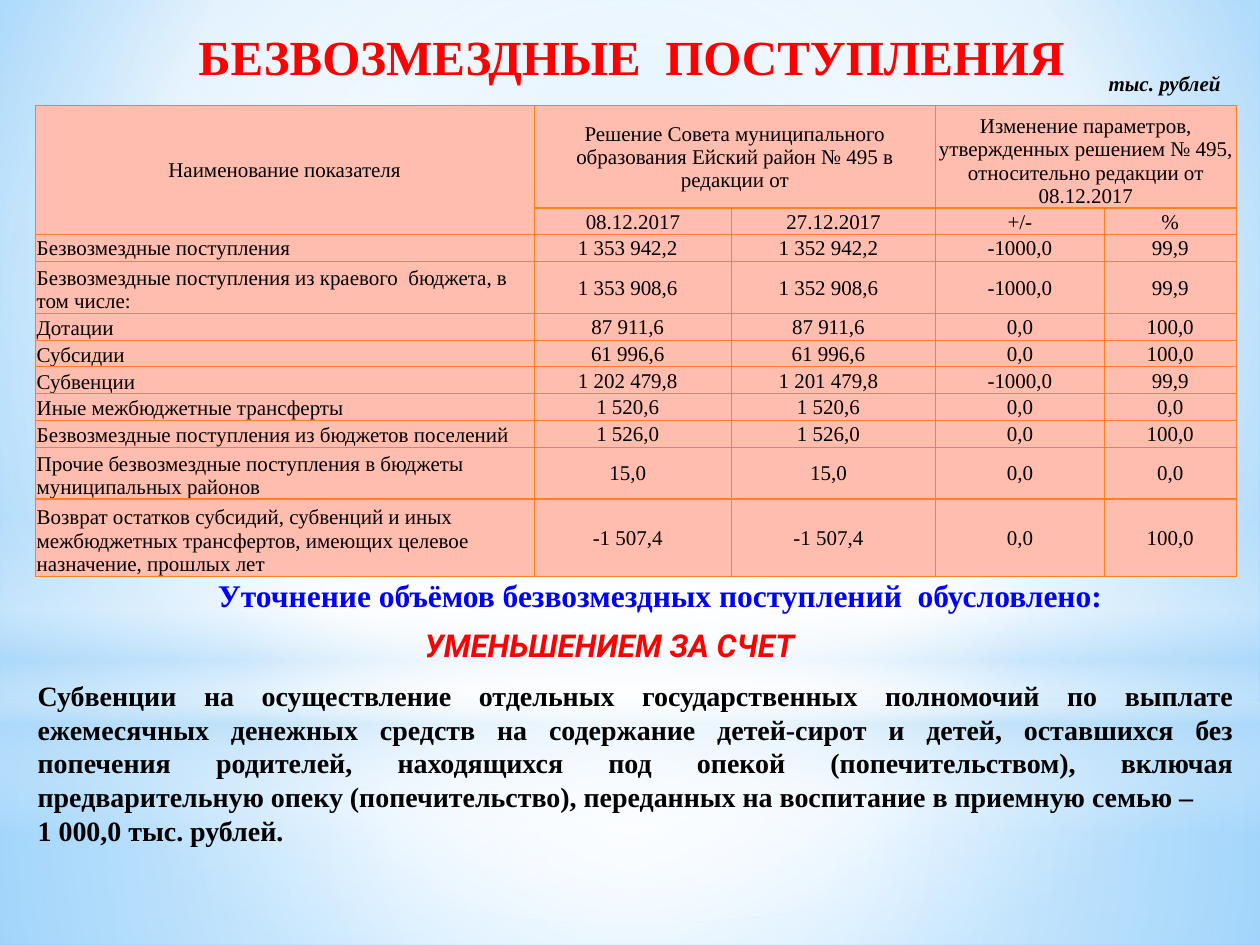
from lxml import etree
from pptx import Presentation
from pptx import util as u
from pptx.dml.color import RGBColor
from pptx.enum import shapes, text
from pptx.oxml import ns

RED = RGBColor(0xFF, 0x00, 0x00)
BLUE = RGBColor(0x00, 0x00, 0xFF)
BLACK = RGBColor(0x00, 0x00, 0x00)
WHITE = RGBColor(0xFF, 0xFF, 0xFF)
PINK = RGBColor(0xFF, 0xBD, 0xAF)
EDGE = RGBColor(0xFF, 0x80, 0x21)
PALE = RGBColor(0xB4, 0xDC, 0xFA)
SKY = RGBColor(0x9E, 0xD5, 0xFF)
DEEP = RGBColor(0x5B, 0xB9, 0xFF)

LEFT, MID, FULL = text.PP_ALIGN.LEFT, text.PP_ALIGN.CENTER, text.PP_ALIGN.JUSTIFY
CORE = (50, 50, 50, 50)


def node(up, tag, **keys):
    return etree.SubElement(up, ns.qn(tag), {k: str(v) for k, v in keys.items()})


class Page:
    serif = "Times New Roman"
    sans = "Roboto"

    def __init__(self, deck):
        self.slide = deck.slides.add_slide(deck.slide_layouts[6])

    def blend(self, part, stops, rect=None):
        old = next(part.iter(ns.qn("a:solidFill")))
        grad = etree.Element(ns.qn("a:gradFill"), rotWithShape="1")
        row = node(grad, "a:gsLst")
        for pos, tint, alpha in stops:
            stop = node(row, "a:gs", pos=pos * 1000)
            tone = node(stop, "a:srgbClr", val=tint)
            if alpha < 100:
                node(tone, "a:alpha", val=alpha * 1000)
        if rect:
            way = node(grad, "a:path", path="circle")
            node(way, "a:fillToRect", **{k: v * 1000 for k, v in zip("ltrb", rect)})
        else:
            node(grad, "a:lin", ang=5400000, scaled=0)
        old.getparent().replace(old, grad)

    def back(self, stops, rect):
        self.slide.background.fill.solid()
        self.blend(self.slide.element, stops, rect)

    def glow(self, kind, top, high, stops, rect=None):
        shape = self.slide.shapes.add_shape(kind, 0, u.Cm(top), u.Cm(25.4), u.Cm(high))
        shape.shadow.inherit = False
        shape.fill.solid()
        shape.line.fill.background()
        self.blend(shape.element, stops, rect)

    def style(self, para, size, tint, align=LEFT, bold=False, slant=False, face=None):
        para.alignment = align
        font = para.font
        font.name, font.size = face or self.serif, u.Pt(size)
        font.bold, font.italic = bold, slant
        font.color.rgb = tint

    def note(self, box, lines, size, tint, wrap=True, **look):
        frame = self.slide.shapes.add_textbox(*map(u.Cm, box)).text_frame
        frame.word_wrap = wrap
        frame.text = "\n".join(lines)
        for para in frame.paragraphs:
            self.style(para, size, tint, bold=True, **look)

    def grid(self, left, top, wides, highs):
        table = self.slide.shapes.add_table(
            len(highs), len(wides), u.Cm(left), u.Cm(top),
            u.Cm(sum(wides)), u.Cm(sum(highs))).table
        table.first_row = table.horz_banding = False
        for col, wide in zip(table.columns, wides):
            col.width = u.Cm(wide)
        for row, high in zip(table.rows, highs):
            row.height = u.Cm(high)
        return table

    def cell(self, cell, words, size, tint, fill=None, edge=None, low=False, pad=0.03, **look):
        cell.text = words
        cell.margin_left = cell.margin_top = u.Cm(0.03)
        cell.margin_right, cell.margin_bottom = u.Cm(pad), 0
        anchor = text.MSO_ANCHOR
        cell.vertical_anchor = anchor.BOTTOM if low else anchor.MIDDLE
        self.style(cell.text_frame.paragraphs[0], size, tint, **look)
        if fill:
            cell.fill.solid()
            cell.fill.fore_color.rgb = fill
        else:
            cell.fill.background()
        props = cell.fill._xPr
        for spot, side in enumerate("LRTB"):
            line = etree.Element(ns.qn("a:ln" + side), w=str(u.Pt(0.75)))
            if edge:
                node(node(line, "a:solidFill"), "a:srgbClr", val=edge)
            else:
                node(line, "a:noFill")
            props.insert(spot, line)


ROWS = [
    ("Наименование показателя",
     "Решение Совета муниципального образования Ейский район № 495 в редакции от", "",
     "Изменение параметров, утвержденных решением № 495, относительно редакции от 08.12.2017", ""),
    ("", "08.12.2017", "27.12.2017", "+/-", "%"),
    ("Безвозмездные поступления", "1 353 942,2", "1 352 942,2", "-1000,0", "99,9"),
    ("Безвозмездные поступления из краевого  бюджета, в том числе:",
     "1 353 908,6", "1 352 908,6", "-1000,0", "99,9"),
    ("Дотации", "87 911,6", "87 911,6", "0,0", "100,0"),
    ("Субсидии", "61 996,6", "61 996,6", "0,0", "100,0"),
    ("Субвенции", "1 202 479,8", "1 201 479,8", "-1000,0", "99,9"),
    ("Иные межбюджетные трансферты", "1 520,6", "1 520,6", "0,0", "0,0"),
    ("Безвозмездные поступления из бюджетов поселений", "1 526,0", "1 526,0", "0,0", "100,0"),
    ("Прочие безвозмездные поступления в бюджеты муниципальных районов",
     "15,0", "15,0", "0,0", "0,0"),
    ("Возврат остатков субсидий, субвенций и иных межбюджетных трансфертов, "
     "имеющих целевое назначение, прошлых лет", "-1 507,4", "-1 507,4", "0,0", "100,0"),
]
HIGHS = [2.06, 0.53, 0.53, 1.03] + [0.53] * 5 + [1.04, 1.55]
WIDES = [10.06, 3.98, 4.11, 3.4, 2.66]


def main():
    deck = Presentation()
    deck.slide_width, deck.slide_height = u.Cm(25.4), u.Cm(19.05)
    page = Page(deck)
    rect, oval = shapes.MSO_SHAPE.RECTANGLE, shapes.MSO_SHAPE.OVAL

    page.back([(0, SKY, 100), (60, WHITE, 100), (100, DEEP, 100)], (20, 10, 20, 60))
    page.glow(rect, 14.17, 4.88, [(0, WHITE, 91), (37, WHITE, 76), (100, PALE, 79)], CORE)
    page.glow(rect, 0, 14.17, [(0, WHITE, 89), (48, WHITE, 62), (100, PALE, 79)], CORE)
    page.glow(rect, 10.46, 6.35, [(0, WHITE, 0), (29, WHITE, 30), (45, PALE, 40),
                                  (55, WHITE, 26), (65, PALE, 60), (100, WHITE, 0)])
    page.glow(oval, 4.45, 14.17, [(0, WHITE, 100), (56, WHITE, 0)], CORE)

    title = page.grid(1.73, -0.66, [22], [2.39])
    page.cell(title.cell(0, 0), "БЕЗВОЗМЕЗДНЫЕ  ПОСТУПЛЕНИЯ", 28, RED,
              low=True, align=MID, bold=True)
    page.note((22.1, 1.3, 2.79, 0.76), ["тыс. рублей"], 12, BLACK, wrap=False, slant=True)
    page.note((0.89, 11.48, 24.84, 1.02),
              ["Уточнение объёмов безвозмездных поступлений  обусловлено:"], 18, BLUE, align=MID)

    table = page.grid(0.71, 2.13, WIDES, HIGHS)
    for r, row in enumerate(ROWS):
        for c, words in enumerate(row):
            low = (r, c) == (0, 3) or (c == 0 and r > 2)
            page.cell(table.cell(r, c), words, 12, BLACK, PINK, EDGE, low,
                      pad=0.24 if r > 1 and c in (1, 2) else 0.03,
                      align=LEFT if c == 0 and r > 1 else MID)
    for start, end in [((0, 0), (1, 0)), ((0, 1), (0, 2)), ((0, 3), (0, 4))]:
        table.cell(*start).merge(table.cell(*end))

    page.note((8.31, 12.5, 8.05, 1.02), ["УМЕНЬШЕНИЕМ ЗА СЧЕТ"], 18, RED,
              wrap=False, slant=True, face=page.sans)
    page.note((0.51, 13.56, 24.61, 3.68), [
        "Субвенции на осуществление отдельных государственных полномочий по выплате "
        "ежемесячных денежных средств на содержание детей-сирот и детей, оставшихся без "
        "попечения родителей, находящихся под опекой (попечительством), включая "
        "предварительную опеку (попечительство), переданных на воспитание в приемную семью –",
        "1 000,0 тыс. рублей."], 16, BLACK, align=FULL)
    deck.save("out.pptx")


if __name__ == "__main__":
    main()
